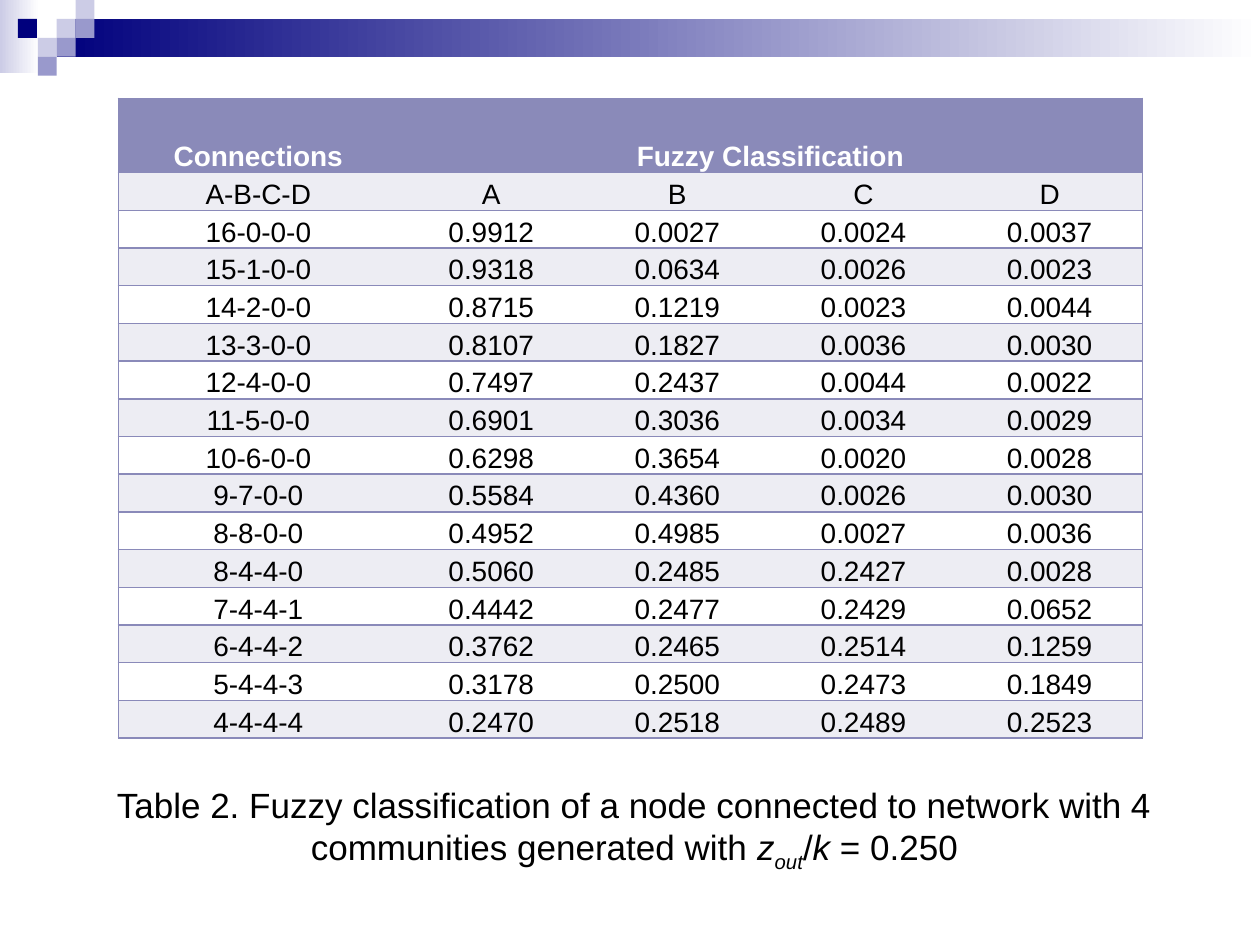
from dataclasses import dataclass

from lxml.etree import SubElement
from pptx import Presentation
from pptx.dml.color import RGBColor
from pptx.enum.shapes import MSO_SHAPE
from pptx.enum.text import MSO_ANCHOR, MSO_AUTO_SIZE, PP_ALIGN
from pptx.oxml.ns import qn
from pptx.slide import Slide
from pptx.table import Table, _Cell
from pptx.util import Inches, Pt


@dataclass(frozen=True)
class Theme:
    font: str = "Arial"
    navy: str = "00007D"
    mid: str = "9999CC"
    pale: str = "CCCCE6"
    head: str = "8A8AB9"
    band: str = "EDEDF3"
    white: str = "FFFFFF"
    black: str = "000000"
    cell: int = 16
    note: int = 20
    rule: int = 1


@dataclass(frozen=True)
class Block:
    """A rectangle in units of the corner grid; two colours make a gradient."""
    col: float
    row: float
    wide: float
    high: float
    tint: str
    fade: str = ""


@dataclass(frozen=True)
class Piece:
    text: str
    slant: bool = False
    sub: bool = False


T = Theme()
WIDE, HIGH = 10, 7.5
UNIT = WIDE * 0.015  # side of one corner square

BLOCKS = [
    Block(0, 0, 2.07, 3.87, T.pale, T.white),
    Block(3, 1, WIDE / UNIT - 3, 2, T.navy, T.white),
    *(Block(col, row, 1, 1, tint) for col, row, tint in [
        (3, 1, T.pale), (4, 0, T.pale), (4, 1, T.mid), (2, 2, T.pale),
        (0.95, 1, T.navy), (3, 2, T.mid), (2, 3, T.mid)]),
]

# Table grid, in inches
LEFT, TOP, SPAN, DEPTH = 0.94, 0.78, 8.13, 5.08
FIRST, HEAD = 2.22, 0.59

ROWS = [line.split() for line in """\
A-B-C-D A B C D
16-0-0-0 0.9912 0.0027 0.0024 0.0037
15-1-0-0 0.9318 0.0634 0.0026 0.0023
14-2-0-0 0.8715 0.1219 0.0023 0.0044
13-3-0-0 0.8107 0.1827 0.0036 0.0030
12-4-0-0 0.7497 0.2437 0.0044 0.0022
11-5-0-0 0.6901 0.3036 0.0034 0.0029
10-6-0-0 0.6298 0.3654 0.0020 0.0028
9-7-0-0 0.5584 0.4360 0.0026 0.0030
8-8-0-0 0.4952 0.4985 0.0027 0.0036
8-4-4-0 0.5060 0.2485 0.2427 0.0028
7-4-4-1 0.4442 0.2477 0.2429 0.0652
6-4-4-2 0.3762 0.2465 0.2514 0.1259
5-4-4-3 0.3178 0.2500 0.2473 0.1849
4-4-4-4 0.2470 0.2518 0.2489 0.2523""".splitlines()]
GRID = [["Connections", "Fuzzy Classification", "", "", ""], *ROWS]

NOTE = [
    Piece("Table 2. Fuzzy classification of a node connected to network "
          "with 4 communities generated with "),
    Piece("z", slant=True), Piece("out", slant=True, sub=True),
    Piece("/"), Piece("k", slant=True), Piece(" = 0.250"),
]


def rgb(tint: str) -> RGBColor:
    return RGBColor.from_string(tint)


def draw_block(slide: Slide, block: Block) -> None:
    box = (block.col, block.row, block.wide, block.high)
    shape = slide.shapes.add_shape(
        MSO_SHAPE.RECTANGLE, *(Inches(n * UNIT) for n in box))
    shape.shadow.inherit = False
    shape.line.fill.background()
    if block.fade:
        shape.fill.gradient()
        shape.fill.gradient_angle = 0
        for stop, tint in zip(shape.fill.gradient_stops,
                              (block.tint, block.fade)):
            stop.color.rgb = rgb(tint)
    else:
        shape.fill.solid()
        shape.fill.fore_color.rgb = rgb(block.tint)


def rule_cell(cell: _Cell, sides: str) -> None:
    """Rule the named sides (of L, R, T, B) and clear the others."""
    props = cell._tc.get_or_add_tcPr()
    for side in "LRTB":
        line = SubElement(props, qn(f"a:ln{side}"), w=str(Pt(T.rule)))
        if side in sides:
            fill = SubElement(line, qn("a:solidFill"))
            SubElement(fill, qn("a:srgbClr"), val=T.head)
        else:
            SubElement(line, qn("a:noFill"))


def fill_cell(cell: _Cell, text: str, tint: str, head: bool) -> None:
    cell.fill.solid()
    cell.fill.fore_color.rgb = rgb(tint)
    cell.vertical_anchor = MSO_ANCHOR.BOTTOM
    cell.margin_left = cell.margin_right = cell.margin_top = Inches(0.01)
    cell.margin_bottom = 0
    cell.text = text
    para = cell.text_frame.paragraphs[0]
    para.alignment = PP_ALIGN.CENTER
    font = para.font
    font.name, font.size, font.bold = T.font, Pt(T.cell), head
    font.color.rgb = rgb(T.white if head else T.black)


def size_grid(table: Table) -> None:
    rest = len(GRID[0]) - 1
    for i, col in enumerate(table.columns):
        col.width = Inches((SPAN - FIRST) / rest if i else FIRST)
    for i, row in enumerate(table.rows):
        row.height = Inches((DEPTH - HEAD) / len(ROWS) if i else HEAD)


def draw_table(slide: Slide) -> None:
    last = len(GRID[0]) - 1
    table = slide.shapes.add_table(
        len(GRID), last + 1,
        Inches(LEFT), Inches(TOP), Inches(SPAN), Inches(DEPTH)).table
    table.horz_banding = False
    size_grid(table)
    for r, row in enumerate(GRID):
        tint = T.head if r == 0 else T.band if r % 2 else T.white
        for c, text in enumerate(row):
            cell = table.cell(r, c)
            # The merged heading carries the right edge itself
            right = c == last or (r == 0 and c == 1)
            rule_cell(cell, "TB" + "L" * (c == 0) + "R" * right)
            fill_cell(cell, text, tint, r == 0)
    table.cell(0, 1).merge(table.cell(0, last))


def draw_note(slide: Slide) -> None:
    box = slide.shapes.add_textbox(
        Inches(0.7), Inches(6.17), Inches(8.67), Inches(0.77))
    frame = box.text_frame
    frame.word_wrap = True
    frame.auto_size = MSO_AUTO_SIZE.SHAPE_TO_FIT_TEXT
    para = frame.paragraphs[0]
    para.alignment = PP_ALIGN.CENTER
    para.font.name, para.font.size = T.font, Pt(T.note)
    para.font.color.rgb = rgb(T.black)
    for piece in NOTE:
        run = para.add_run()
        run.text = piece.text
        run.font.italic = piece.slant
        if piece.sub:
            run._r.get_or_add_rPr().set("baseline", "-25000")


def main() -> None:
    deck = Presentation()
    deck.slide_width, deck.slide_height = Inches(WIDE), Inches(HIGH)
    slide = deck.slides.add_slide(deck.slide_layouts[6])
    # Corner squares and top bar
    for block in BLOCKS:
        draw_block(slide, block)
    # Results and caption
    draw_table(slide)
    draw_note(slide)
    deck.save("out.pptx")


if __name__ == "__main__":
    main()
